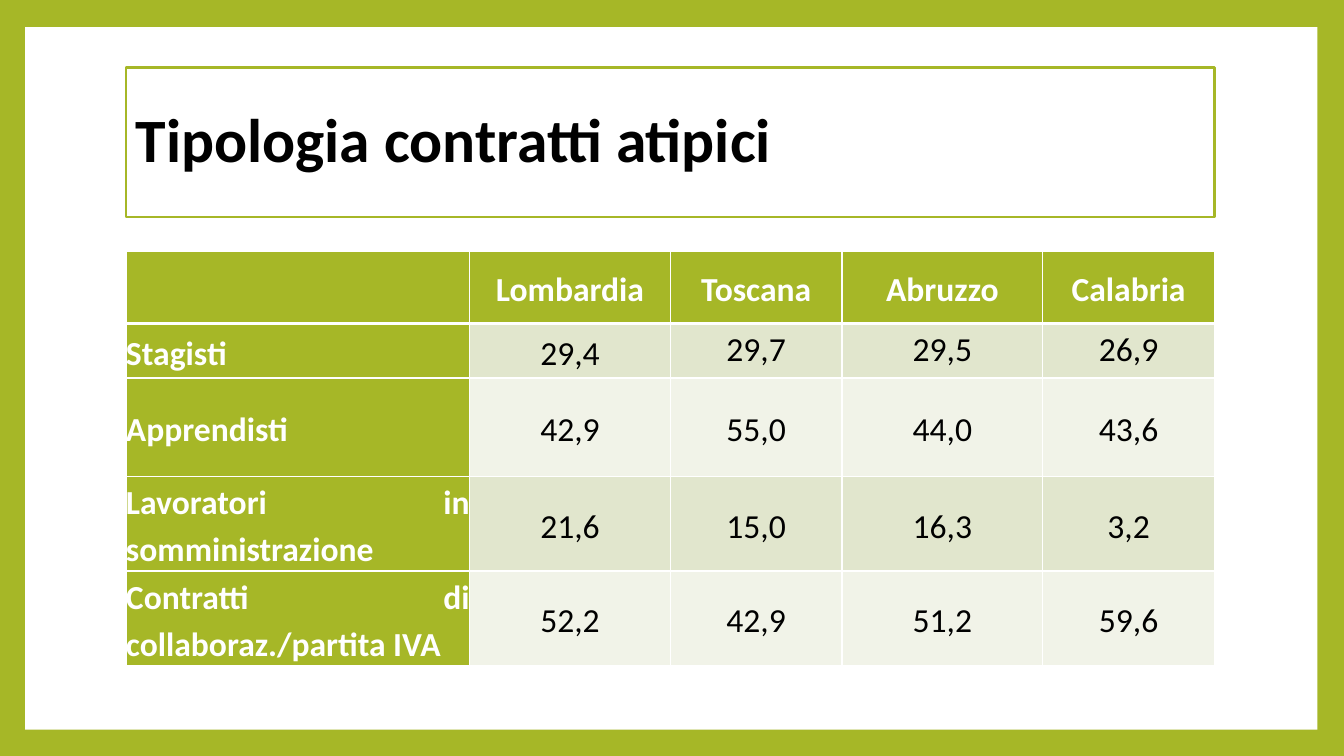
from dataclasses import dataclass

from lxml.etree import SubElement
from pptx import Presentation
from pptx.dml.color import RGBColor as RGB
from pptx.enum.shapes import MSO_SHAPE as Shape
from pptx.enum.text import MSO_ANCHOR as Anchor, PP_ALIGN as Align
from pptx.oxml.ns import qn
from pptx.util import Pt


@dataclass(frozen=True)
class Theme:
    font: str = "Calibri"
    title_size: int = 44
    table_size: int = 24
    green: str = "A6B727"
    white: str = "FFFFFF"
    black: str = "000000"
    bands: tuple = ("E1E6CD", "F1F3E8")


THEME = Theme()
LEFT, WIDTH = 90, 777.6
COLUMN_WIDTHS = (245.5, 143.4, 122.6, 143.4, 122.7)
ROW_HEIGHTS = (51.8, 38.9, 70.6, 67, 67)
ROWS = (
    ("", "Lombardia", "Toscana", "Abruzzo", "Calabria"),
    ("Stagisti", "29,4", "29,7", "29,5", "26,9"),
    ("Apprendisti", "42,9", "55,0", "44,0", "43,6"),
    ("Lavoratori in somministrazione", "21,6", "15,0", "16,3", "3,2"),
    ("Contratti di collaboraz./partita IVA", "52,2", "42,9", "51,2", "59,6"),
)


def set_all(target, values):
    for name, value in values.items():
        setattr(target, name, value)


def paint(fill, color):
    fill.solid()
    fill.fore_color.rgb = RGB.from_string(color)


def write(p, text, size, color, bold, align, spacing):
    set_all(p, {"alignment": align, "line_spacing": spacing})
    r = p.add_run()
    r.text = text
    set_all(r.font, {"name": THEME.font, "size": Pt(size), "bold": bold})
    r.font.color.rgb = RGB.from_string(color)


def add_box(s, left, top, width, height, line=None):
    """Add a white rectangle, outlined only if a line colour is given."""
    sp = s.shapes.add_shape(Shape.RECTANGLE, Pt(left), Pt(top), Pt(width), Pt(height))
    sp.shadow.inherit = False
    paint(sp.fill, THEME.white)
    if line:
        paint(sp.line.fill, line)
        sp.line.width = Pt(1.5)
    else:
        sp.line.fill.background()
    return sp


def add_title(s, text):
    tf = add_box(s, LEFT, 48.2, WIDTH, 106.6, THEME.green).text_frame
    set_all(tf, {"word_wrap": True, "vertical_anchor": Anchor.MIDDLE})
    write(tf.paragraphs[0], text, THEME.title_size, THEME.black, True, Align.LEFT, 0.9)


def add_borders(cell, widths):
    """Add white cell borders; call before filling, as borders come first."""
    tc_pr = cell._tc.get_or_add_tcPr()
    for side, width in widths.items():
        ln = SubElement(tc_pr, qn(f"a:ln{side}"), w=str(Pt(width)))
        fill = SubElement(ln, qn("a:solidFill"))
        SubElement(fill, qn("a:srgbClr"), val=THEME.white)


def format_cell(cell, text, row, col):
    heading = row == 0 or col == 0
    set_all(cell, dict.fromkeys(
        ("margin_left", "margin_right", "margin_top", "margin_bottom"), 0))
    top_aligned = row == 1 and col > 1
    cell.vertical_anchor = Anchor.TOP if top_aligned else Anchor.MIDDLE
    add_borders(cell, {"L": 1, "R": 1, "T": 3 if row == 1 else 1,
                       "B": 3 if row == 0 else 1})
    paint(cell.fill, THEME.green if heading else THEME.bands[(row - 1) % 2])
    if text:
        write(cell.text_frame.paragraphs[0], text, THEME.table_size,
              THEME.white if heading else THEME.black, heading,
              Align.CENTER if col else Align.JUSTIFY, 1.15)


def add_contract_table(s):
    table = s.shapes.add_table(len(ROWS), len(COLUMN_WIDTHS), Pt(LEFT), Pt(179.3),
                               Pt(WIDTH), Pt(sum(ROW_HEIGHTS))).table
    set_all(table, {"first_row": False, "horz_banding": False})
    for column, width in zip(table.columns, COLUMN_WIDTHS):
        column.width = Pt(width)
    for i, (height, texts) in enumerate(zip(ROW_HEIGHTS, ROWS)):
        table.rows[i].height = Pt(height)
        for j, text in enumerate(texts):
            format_cell(table.cell(i, j), text, i, j)


def main():
    prs = Presentation()
    set_all(prs, {"slide_width": Pt(960), "slide_height": Pt(540)})
    s = prs.slides.add_slide(prs.slide_layouts[6])
    paint(s.background.fill, THEME.green)
    add_box(s, 18, 19.4, 923, 501.8)
    add_title(s, "Tipologia contratti atipici")
    add_contract_table(s)
    prs.save("out.pptx")


if __name__ == "__main__":
    main()
